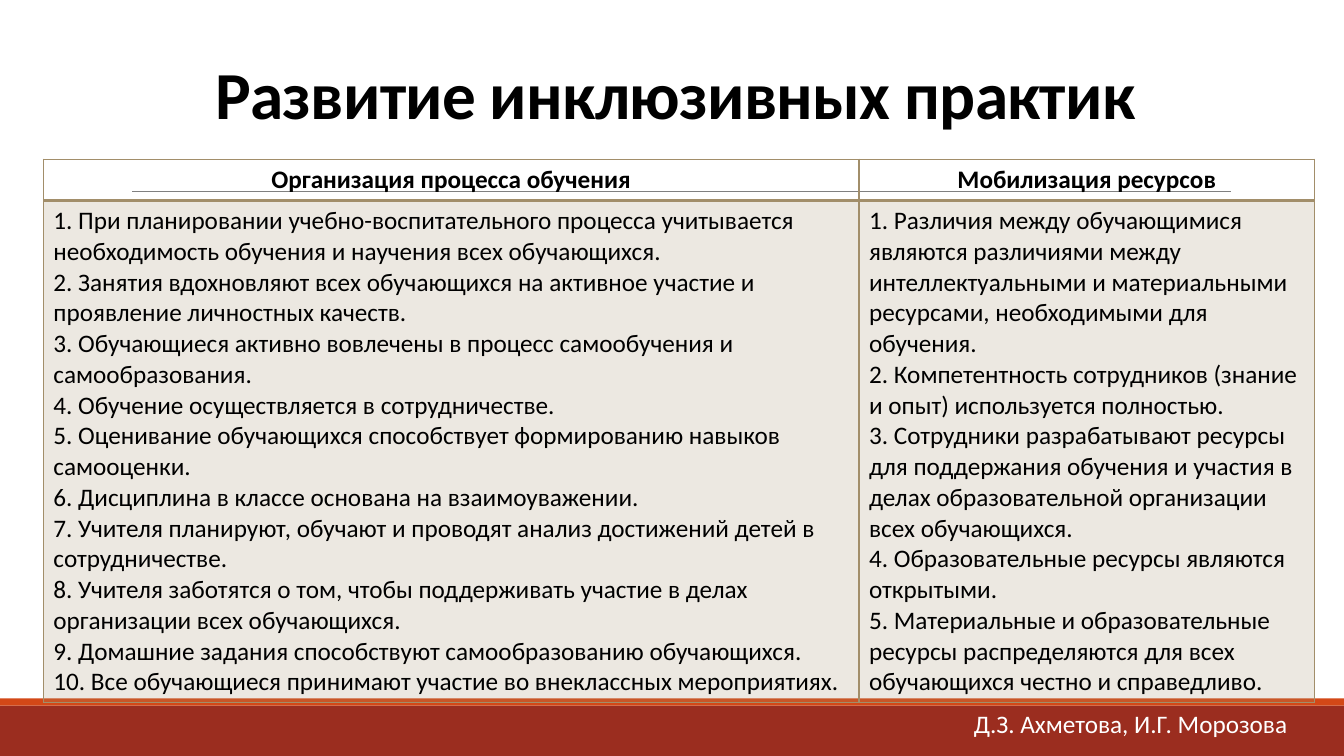
from lxml import etree
from pptx import Presentation
from pptx.dml.color import RGBColor
from pptx.enum.shapes import MSO_CONNECTOR, MSO_SHAPE
from pptx.enum.text import MSO_ANCHOR, PP_ALIGN
from pptx.oxml.ns import qn
from pptx.util import Inches, Pt

RECTANGLE = MSO_SHAPE.RECTANGLE
STRAIGHT = MSO_CONNECTOR.STRAIGHT
CENTER, LEFT = PP_ALIGN.CENTER, PP_ALIGN.LEFT
BOTTOM = MSO_ANCHOR.BOTTOM

WIDTH, HEIGHT = 13.33, 7.5
TITLE_ONLY = 5
FONT = "Calibri"
BLACK, WHITE, GRAY = "000000", "FFFFFF", "808080"
BRICK, ORANGE, SAND = "9B2D1F", "D34817", "A28E6A"

# Table content: heading, column width, numbered statements
COLUMNS = [
    ("Организация процесса обучения", 8.09, [
        "При планировании учебно-воспитательного процесса учитывается необходимость обучения и научения всех обучающихся.",
        "Занятия вдохновляют всех обучающихся на активное участие и проявление личностных качеств.",
        "Обучающиеся активно вовлечены в процесс самообучения и самообразования.",
        "Обучение осуществляется в сотрудничестве.",
        "Оценивание обучающихся способствует формированию навыков самооценки.",
        "Дисциплина в классе основана на взаимоуважении.",
        "Учителя планируют, обучают и проводят анализ достижений детей в сотрудничестве.",
        "Учителя заботятся о том, чтобы поддерживать участие в делах организации всех обучающихся.",
        "Домашние задания способствуют самообразованию обучающихся.",
        "Все обучающиеся принимают участие во внеклассных мероприятиях.",
    ]),
    ("Мобилизация ресурсов", 4.52, [
        "Различия между обучающимися являются различиями между интеллектуальными и материальными ресурсами, необходимыми для обучения.",
        "Компетентность сотрудников (знание и опыт) используется полностью.",
        "Сотрудники разрабатывают ресурсы для поддержания обучения и участия в делах образовательной организации всех обучающихся.",
        "Образовательные ресурсы являются открытыми.",
        "Материальные и образовательные ресурсы распределяются для всех обучающихся честно и справедливо.",
    ]),
]
ROW_HEIGHTS = [0.41, 4.98]


def color(hex_string):
    return RGBColor.from_string(hex_string)


def write(text_frame, lines, size, text_color, bold=False, align=LEFT):
    """Fill a text frame with one paragraph per line."""
    for index, line in enumerate(lines):
        paragraph = text_frame.add_paragraph() if index else text_frame.paragraphs[0]
        paragraph.alignment = align
        run = paragraph.add_run()
        run.text = line
        run.font.name = FONT
        run.font.size = Pt(size)
        run.font.bold = bold
        run.font.color.rgb = color(text_color)


def add_band(slide, top, height, fill):
    """Draw a full-width band."""
    shape = slide.shapes.add_shape(
        RECTANGLE, 0, Inches(top), Inches(WIDTH), Inches(height))
    shape.shadow.inherit = False
    shape.fill.solid()
    shape.fill.fore_color.rgb = color(fill)
    shape.line.fill.background()


def add_rule(slide, left, right, top):
    """Draw a thin horizontal line."""
    rule = slide.shapes.add_connector(
        STRAIGHT, Inches(left), Inches(top), Inches(right), Inches(top))
    rule.line.color.rgb = color(GRAY)
    rule.line.width = Pt(0.5)
    etree.SubElement(rule.element.spPr, qn("a:effectLst"))


def add_title(slide, text):
    title = slide.shapes.title
    title.left, title.top = Inches(1.2), Inches(0.31)
    title.width, title.height = Inches(11), Inches(1.06)
    title.text_frame.vertical_anchor = BOTTOM
    title.text_frame.word_wrap = True
    write(title.text_frame, [text], 48, BLACK, bold=True, align=CENTER)
    paragraph = title.text_frame.paragraphs[0]
    paragraph.line_spacing = 0.85
    paragraph.runs[0].font._element.set("spc", "-50")


def set_borders(cell, bottom_width):
    """Border elements come before the fill in the cell properties."""
    properties = cell._tc.get_or_add_tcPr()
    widths = {"a:lnL": 1, "a:lnR": 1, "a:lnT": 1, "a:lnB": bottom_width}
    for index, (side, width) in enumerate(widths.items()):
        line = etree.Element(qn(side), w=str(Pt(width)))
        fill = etree.SubElement(line, qn("a:solidFill"))
        etree.SubElement(fill, qn("a:srgbClr"), val=SAND)
        properties.insert(index, line)


def fill_translucent(cell, fill, percent):
    cell.fill.solid()
    cell.fill.fore_color.rgb = color(fill)
    swatch = cell._tc.tcPr.find(".//" + qn("a:srgbClr"))
    etree.SubElement(swatch, qn("a:alpha"), val=str(percent * 1000))


def add_practice_table(slide, left, top):
    width = sum(column[1] for column in COLUMNS)
    table = slide.shapes.add_table(
        len(ROW_HEIGHTS), len(COLUMNS), Inches(left), Inches(top),
        Inches(width), Inches(sum(ROW_HEIGHTS))).table
    table.first_row = table.horz_banding = False
    for row, height in zip(table.rows, ROW_HEIGHTS):
        row.height = Inches(height)
    for index, (heading, column_width, statements) in enumerate(COLUMNS):
        table.columns[index].width = Inches(column_width)
        header, body = table.cell(0, index), table.cell(1, index)
        write(header.text_frame, [heading], 18, BLACK, bold=True, align=CENTER)
        header.fill.background()
        set_borders(header, 2)
        numbered = [f"{n}. {text}" for n, text in enumerate(statements, 1)]
        write(body.text_frame, numbered, 18, BLACK)
        fill_translucent(body, SAND, 20)
        set_borders(body, 1)


def add_authors(slide, text):
    box = slide.shapes.add_textbox(
        Inches(9.56), Inches(6.98), Inches(3.48), Inches(0.4))
    box.text_frame.word_wrap = True
    write(box.text_frame, [text], 18, WHITE)


def main():
    presentation = Presentation()
    presentation.slide_width = Inches(WIDTH)
    presentation.slide_height = Inches(HEIGHT)
    slide = presentation.slides.add_slide(presentation.slide_layouts[TITLE_ONLY])

    # Footer bands and rule behind the table
    add_band(slide, 7, 0.5, BRICK)
    add_band(slide, 6.93, 0.07, ORANGE)
    add_rule(slide, 1.31, 12.21, 1.9)

    # Content
    add_title(slide, "Развитие инклюзивных практик")
    add_practice_table(slide, 0.43, 1.58)
    add_authors(slide, "Д.З. Ахметова, И.Г. Морозова")

    presentation.save("out.pptx")


if __name__ == "__main__":
    main()
